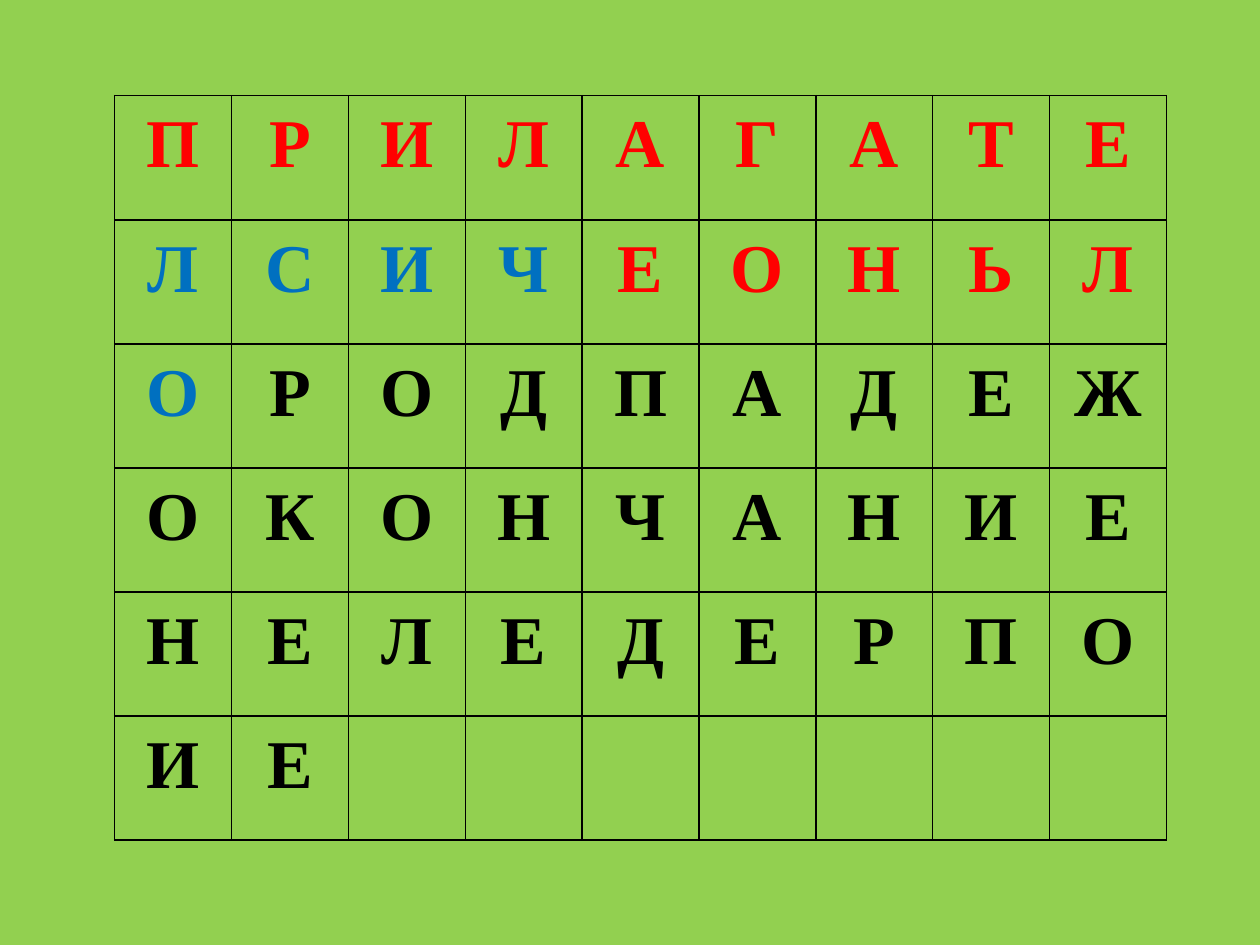
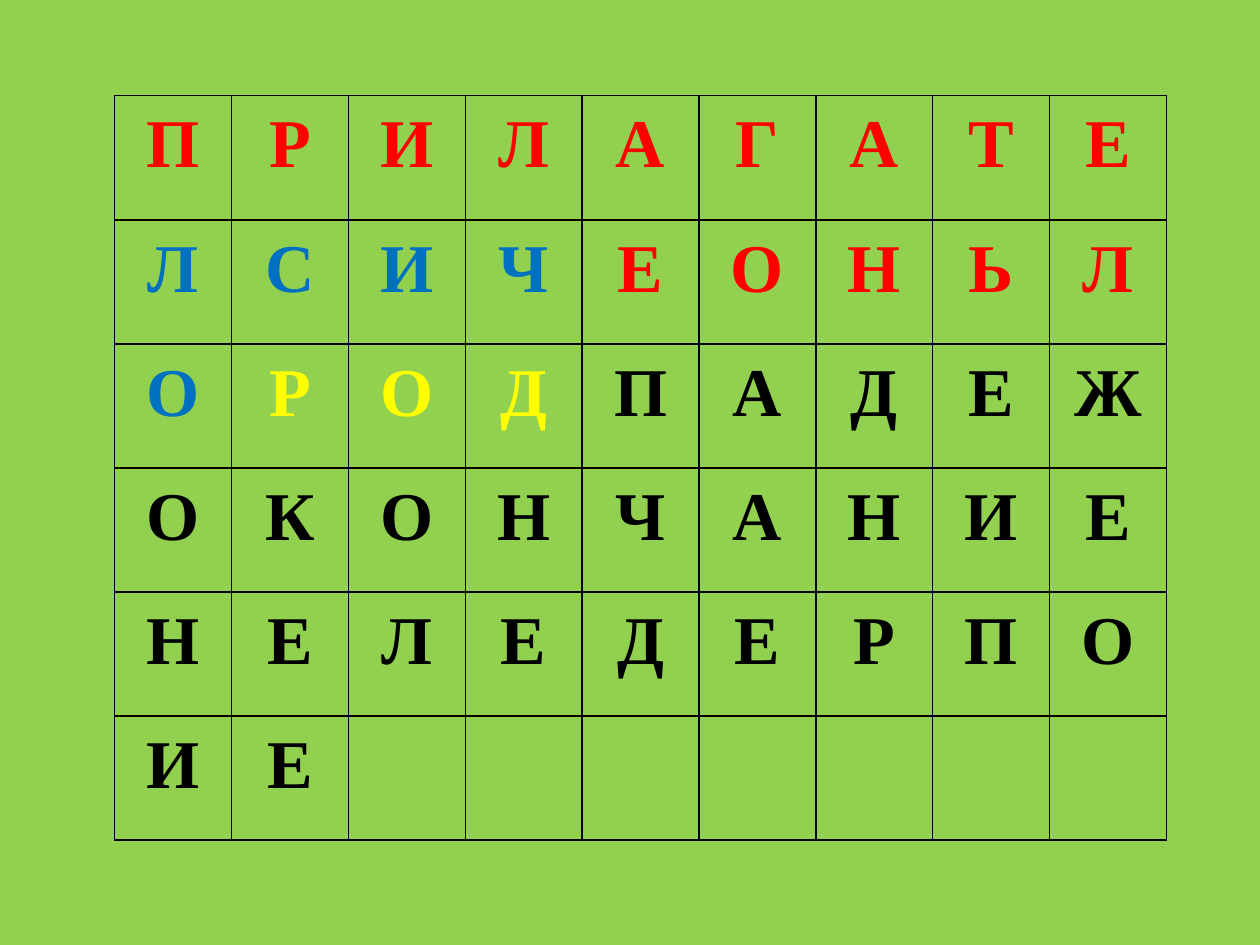
from lxml import etree
from pptx import Presentation
from pptx.dml.color import RGBColor
from pptx.enum.text import PP_ALIGN
from pptx.oxml.ns import qn
from pptx.util import Inches, Pt

CENTER = PP_ALIGN.CENTER
GREEN, BLACK = "92D050", "000000"
HUES = {"r": "FF0000", "b": "0070C0", "y": "FFFF00", "k": BLACK}
COL, ROW = Inches(8.35) // 9, Inches(5.91) // 6
LEFT, TOP = Inches(0.91), Inches(0.76)

LINES = ["ПРИЛАГАТЕ", "ЛСИЧЕОНЬЛ", "ОРОДПАДЕЖ", "ОКОНЧАНИЕ", "НЕЛЕДЕРПО", "ИЕ"]
HEAD = "r" * 9 + "bbbbrrrrr"
MARKS = [HEAD + "b", HEAD + "byyy"]


def paint(code):
    return RGBColor.from_string(code)


def write(frame, text, size=39, color=BLACK, bold=True, font="Times New Roman"):
    par = frame.paragraphs[0]
    par.alignment = CENTER
    par.line_spacing = 1.15
    run = par.add_run()
    run.text = text
    run.font.size = Pt(size)
    run.font.name = font
    run.font.bold = bold
    run.font.color.rgb = paint(color)


deck = Presentation()
deck.slide_width, deck.slide_height = Inches(10), Inches(7.5)

for marks in MARKS:
    slide = deck.slides.add_slide(deck.slide_layouts[6])
    slide.background.fill.solid()
    slide.background.fill.fore_color.rgb = paint(GREEN)

    grid = slide.shapes.add_table(6, 9, LEFT, TOP, COL * 9, ROW * 6).table
    grid.first_row = grid.horz_banding = False
    for col in grid.columns:
        col.width = COL
    for row in grid.rows:
        row.height = ROW

    marks = marks.ljust(54, "k")
    for spot, cell in enumerate(grid.iter_cells()):
        row, col = divmod(spot, 9)
        cell.margin_left = cell.margin_right = Inches(0.04)
        cell.margin_top = cell.margin_bottom = 0
        props = cell._tc.get_or_add_tcPr()
        for side in "LRTB":
            edge = etree.SubElement(props, qn("a:ln" + side), w=str(Pt(1)))
            fill = etree.SubElement(edge, qn("a:solidFill"))
            etree.SubElement(fill, qn("a:srgbClr"), val=BLACK)
        cell.fill.background()
        if col < len(LINES[row]):
            write(cell.text_frame, LINES[row][col], color=HUES[marks[spot]])

deck.save("out.pptx")
